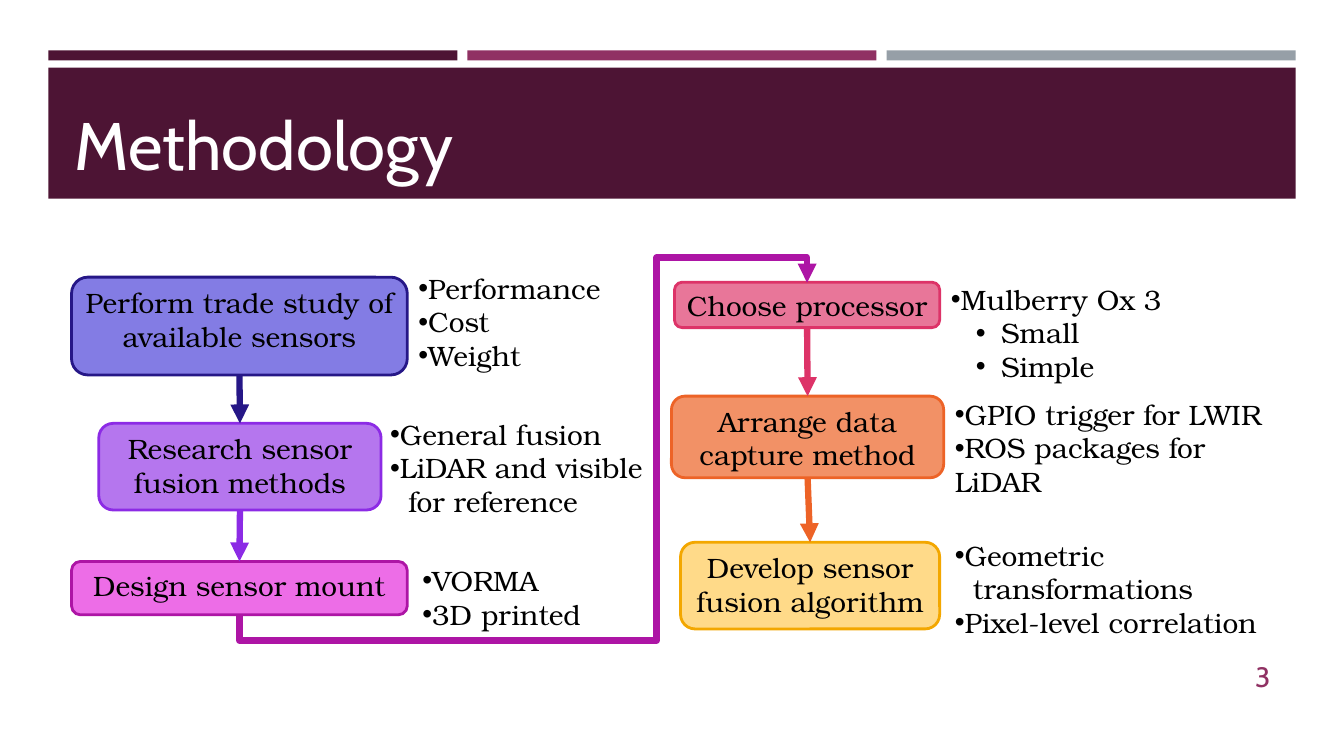
from lxml.etree import SubElement
from pptx import Presentation
from pptx.dml.color import RGBColor
from pptx.enum.shapes import MSO_CONNECTOR, MSO_SHAPE
from pptx.enum.text import MSO_ANCHOR, MSO_AUTO_SIZE, PP_ALIGN
from pptx.oxml.ns import qn
from pptx.util import Inches, Pt

HEADING_FONT, BODY_FONT = "Cabin", "TeX Gyre Bonum"
PLUM, BERRY, GREY = "4D1434", "903163", "969FA7"
BULLET, CONTINUED, SUB = "bullet", "continued", "sub"
INDENTS = {BULLET: (0, 0), CONTINUED: (0.18, 0), SUB: (0.5, -0.25)}

LEFT_STEPS = [
    ("Perform trade study of available sensors", (0.71, 2.75, 3.33, 0.97), "837CE4", "261787",
     (4.11, 2.65, 2.7, 1.65), [("Performance", BULLET), ("Cost", BULLET), ("Weight", BULLET)]),
    ("Research sensor fusion methods", (0.98, 4.2, 2.8, 0.86), "B576EE", "8C2BE5",
     (3.83, 4.1, 3.37, 1.66),
     [("General fusion", BULLET), ("LiDAR and visible", BULLET), ("for reference", CONTINUED)]),
    ("Design sensor mount", (0.71, 5.57, 3.33, 0.53), "ED6DE7", "AD15A5",
     (4.15, 5.55, 4.3, 1.65), [("VORMA", BULLET), ("3D printed", BULLET)]),
]
RIGHT_STEPS = [
    ("Choose processor", (6.69, 2.8, 2.63, 0.45), "E87699", "DD3368",
     (9.39, 2.76, 3.9, 1.65), [("Mulberry Ox 3", BULLET), ("Small", SUB), ("Simple", SUB)]),
    ("Arrange data capture method", (6.66, 3.93, 2.7, 0.81), "F29166", "ED6327",
     (9.43, 3.9, 3.44, 2.15),
     [("GPIO trigger for LWIR", BULLET), ("ROS packages for LiDAR", BULLET)]),
    ("Develop sensor fusion algorithm", (6.75, 5.38, 2.57, 0.86), "FFDA89", "F3A700",
     (9.43, 5.3, 3.19, 1.22),
     [("Geometric", BULLET), ("transformations", CONTINUED), ("Pixel-level correlation", BULLET)]),
]


def color(value):
    """Turn a hex string into a colour."""
    return RGBColor.from_string(value)


def inches(box):
    """Turn a box given in inches into lengths."""
    return [Inches(length) for length in box]


def format_text(frame, size, font, ink, align, inset=None):
    """Format every paragraph and run of a text frame."""
    frame.word_wrap = True
    if inset is not None:
        frame.margin_left = frame.margin_right = Inches(inset)
        frame.margin_top = frame.margin_bottom = Inches(inset)
    for para in frame.paragraphs:
        para.alignment = align
        for span in para.runs:
            span.font.size = Pt(size)
            span.font.name = font
            span.font.color.rgb = color(ink)


def add_block(page, kind, box, fill, outline=None):
    """Add a filled shape with an optional outline."""
    block = page.shapes.add_shape(kind, *inches(box))
    block.shadow.inherit = False
    block.fill.solid()
    block.fill.fore_color.rgb = color(fill)
    if outline:
        block.line.color.rgb = color(outline)
        block.line.width = Pt(2)
    else:
        block.line.fill.background()
    return block


def add_header(page, box):
    """Draw the three stripes, the banner and the title."""
    left, top, width, height = box
    gap = 0.1
    stripe = (width - 2 * gap) / 3
    for column, fill in enumerate((PLUM, BERRY, GREY)):
        place = (left + column * (stripe + gap), top, stripe, 0.1)
        add_block(page, MSO_SHAPE.RECTANGLE, place, fill)
    add_block(page, MSO_SHAPE.RECTANGLE, (left, top + 0.17, width, height - 0.17), PLUM)
    title = page.shapes.title
    title.left, title.top, title.width, title.height = inches(
        (left + 0.16, top + 0.27, width - 0.31, height - 0.36))
    title.text_frame.text = "Methodology"
    title.text_frame.auto_size = MSO_AUTO_SIZE.NONE
    title.text_frame.vertical_anchor = MSO_ANCHOR.BOTTOM
    format_text(title.text_frame, 48, HEADING_FONT, "FFFFFF", PP_ALIGN.LEFT)
    page.shapes._spTree.append(title._element)


def add_step(page, label, box, fill, outline):
    """Add one rounded step of the flow."""
    step = add_block(page, MSO_SHAPE.ROUNDED_RECTANGLE, box, fill, outline)
    step.text_frame.text = label
    step.text_frame.vertical_anchor = MSO_ANCHOR.TOP
    format_text(step.text_frame, 20, BODY_FONT, "000000", PP_ALIGN.CENTER, 0.04)
    return step


def add_details(page, box, items):
    """Add the list beside a step."""
    frame = page.shapes.add_textbox(*inches(box)).text_frame
    frame.text = "\n".join(text for text, kind in items)
    format_text(frame, 20, BODY_FONT, "000000", PP_ALIGN.LEFT, 0.04)
    for para, (text, kind) in zip(frame.paragraphs, items):
        margin, indent = INDENTS[kind]
        properties = para._p.get_or_add_pPr()
        properties.set("marL", str(Inches(margin)))
        properties.set("indent", str(Inches(indent)))
        if kind != CONTINUED:
            SubElement(properties, qn("a:buFont"), typeface="Arial")
            SubElement(properties, qn("a:buChar"), char="•")


def add_arrow(page, kind, start, end, ink):
    """Join the bottom of one step to the top of another."""
    arrow = page.shapes.add_connector(kind, 0, 0, 0, 0)
    arrow.begin_connect(start, 2)
    arrow.end_connect(end, 0)
    arrow.line.color.rgb = color(ink)
    arrow.line.width = Pt(4.5)
    SubElement(arrow.line._get_or_add_ln(), qn("a:tailEnd"), type="triangle")
    SubElement(arrow._element.spPr, qn("a:effectLst"))
    return arrow


def add_bridge(page, start, end, ink):
    """Lead from the foot of one column to the head of the next."""
    bridge = add_arrow(page, MSO_CONNECTOR.ELBOW, start, end, ink)
    bridge.left, bridge.top, bridge.width, bridge.height = inches((3.54, 1.64, 3.3, 5.63))
    properties = bridge._element.spPr
    frame = properties.find(qn("a:xfrm"))
    for name, value in (("rot", "5400000"), ("flipH", "1"), ("flipV", "1")):
        frame.set(name, value)
    geometry = properties.find(qn("a:prstGeom"))
    geometry.set("prst", "bentConnector5")
    guides = geometry.find(qn("a:avLst"))
    for number, share in enumerate((-7600, 73500, 107600), 1):
        SubElement(guides, qn("a:gd"), name=f"adj{number}", fmla=f"val {share}")


def add_column(page, entries):
    """Stack the steps of one column and join them with arrows."""
    steps = []
    for label, box, fill, outline, details_box, items in entries:
        steps.append(add_step(page, label, box, fill, outline))
        add_details(page, details_box, items)
    for entry, start, end in zip(entries, steps, steps[1:]):
        add_arrow(page, MSO_CONNECTOR.STRAIGHT, start, end, entry[3])
    return steps


def add_page_number(page, box):
    """Add the number at the lower right."""
    frame = page.shapes.add_textbox(*inches(box)).text_frame
    frame.text = "3"
    frame.vertical_anchor = MSO_ANCHOR.MIDDLE
    format_text(frame, 20, HEADING_FONT, BERRY, PP_ALIGN.RIGHT)


def main():
    """Build the deck and save it."""
    deck = Presentation()
    deck.slide_width, deck.slide_height = Inches(13.33), Inches(7.5)
    page = deck.slides.add_slide(deck.slide_layouts[5])
    add_header(page, (0.48, 0.5, 12.37, 1.47))
    left_steps = add_column(page, LEFT_STEPS)
    right_steps = add_column(page, RIGHT_STEPS)
    add_bridge(page, left_steps[-1], right_steps[0], LEFT_STEPS[-1][3])
    add_page_number(page, (11.55, 6.51, 1.15, 0.4))
    deck.save("out.pptx")


if __name__ == "__main__":
    main()
